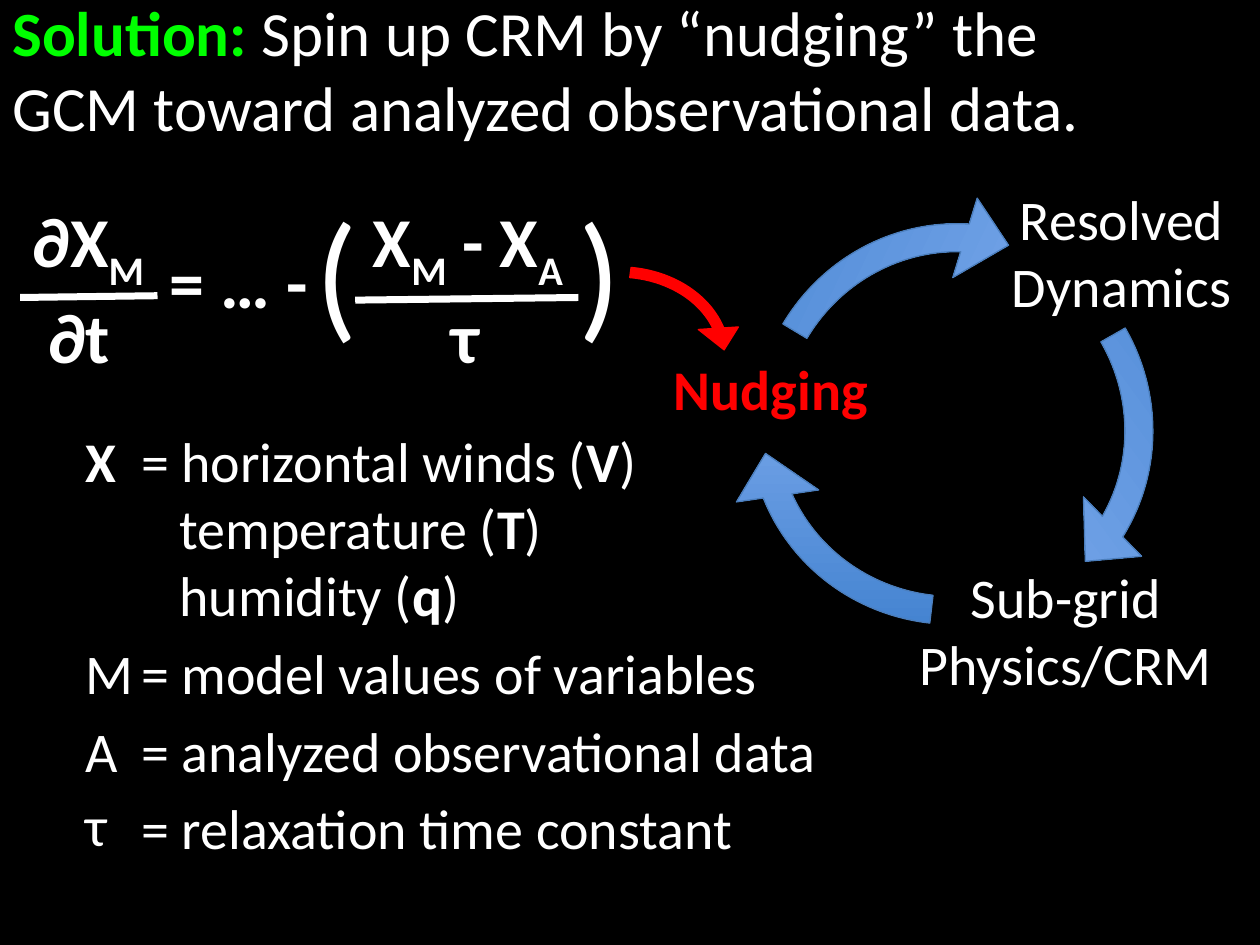
import pptx
import pptx.dml.color
import pptx.enum.shapes
import pptx.enum.text
import pptx.oxml.ns
import pptx.util
from lxml import etree

Pt = pptx.util.Pt
Align = pptx.enum.text.PP_ALIGN
Anchor = pptx.enum.text.MSO_ANCHOR
qn = pptx.oxml.ns.qn


def rgb(value):
    return pptx.dml.color.RGBColor.from_string(value)


class SlideBuilder:
    font_name = "Calibri"
    white, red, green, black = "FFFFFF", "FF0000", "00FF00", "000000"
    arrow_gradient, arrow_line = ("3F80CE", "A4C4FF"), "4B7EBC"

    def __init__(self, slide):
        self.slide = slide
        self.shapes = slide.shapes
        slide.background.fill.solid()
        slide.background.fill.fore_color.rgb = rgb(self.black)

    def start_group(self):
        self.shapes = self.slide.shapes.add_group_shape().shapes

    def end_group(self):
        self.shapes = self.slide.shapes

    def text_box(self, left, top, width, height, anchor=Anchor.TOP):
        box = self.shapes.add_textbox(Pt(left), Pt(top), Pt(width), Pt(height))
        frame = box.text_frame
        frame.word_wrap = True
        frame.vertical_anchor = anchor
        return frame

    def paragraph(self, frame, runs, size, color=white, bold=None,
                  align=Align.LEFT, margin=0, hanging=0, after=0, bullet=None):
        first = frame.paragraphs[0]
        paragraph = frame.add_paragraph() if first.runs else first
        paragraph.alignment = align
        paragraph.space_after = Pt(after)
        font = paragraph.font
        font.name, font.size, font.bold = self.font_name, Pt(size), bold
        font.color.rgb = rgb(color)
        properties = paragraph._p.get_or_add_pPr()
        properties.set("marL", str(Pt(margin)))
        properties.set("indent", str(Pt(-hanging)))
        if bullet:
            defaults = properties.find(qn("a:defRPr"))
            defaults.addprevious(etree.Element(qn("a:buFont"), typeface=self.font_name))
            defaults.addprevious(etree.Element(qn("a:buChar"), char=bullet))
        for text, style in runs:
            run = paragraph.add_run()
            run.text = text
            if "bold" in style:
                run.font.bold = style["bold"]
            if "color" in style:
                run.font.color.rgb = rgb(style["color"])
            if "baseline" in style:
                run._r.get_or_add_rPr().set("baseline", str(style["baseline"]))

    def label(self, text, left, top, width, height, size=32, **style):
        frame = self.text_box(left, top, width, height)
        self.paragraph(frame, [(text, {})], size, **style)

    def arc_arrow(self, left, top, width, height, adjustments, rotation=0, color=None):
        arrow = self.shapes.add_shape(
            pptx.enum.shapes.MSO_SHAPE.CIRCULAR_ARROW,
            Pt(left), Pt(top), Pt(width), Pt(height))
        for index, value in enumerate(adjustments):
            arrow.adjustments[index] = value
        arrow.rotation = rotation
        arrow.shadow.inherit = False
        if color:
            arrow.fill.solid()
            arrow.fill.fore_color.rgb = rgb(color)
        else:
            arrow.fill.gradient()
            arrow.fill.gradient_angle = 270
            stops = arrow.fill.gradient_stops
            for position, (stop, shade) in enumerate(zip(stops, self.arrow_gradient)):
                stop.position = position
                stop.color.rgb = rgb(shade)
        arrow.line.color.rgb = rgb(color or self.arrow_line)
        arrow.line.width = Pt(0.75)

    def fraction_bar(self, x1, y1, x2, y2):
        bar = self.shapes.add_connector(
            pptx.enum.shapes.MSO_CONNECTOR.STRAIGHT, Pt(x1), Pt(y1), Pt(x2), Pt(y2))
        bar.line.color.rgb = rgb(self.white)
        bar.line.width = Pt(4)
        etree.SubElement(bar._element.spPr, qn("a:effectLst"))


def add_title(builder):
    title = builder.text_box(0, -5.76, 660, 90, Anchor.MIDDLE)
    builder.paragraph(title, [
        ("Solution: ", {"bold": True, "color": builder.green}),
        ("Spin up CRM by “nudging” the GCM toward analyzed observational data.", {}),
    ], 36)


def add_cycle(builder):
    builder.start_group()
    for rotation, start in ((180, 166.02), (53.9, 165.89), (295.4, 165.39)):
        builder.arc_arrow(412.5, 114.5, 264, 258,
                          (0.062, 8.04, 202.98, start, 0.092), rotation)
    builder.label("Resolved Dynamics", 556.5, 102, 169, 85, align=Align.CENTER)
    builder.label("Sub-grid Physics/CRM", 514, 318, 190, 85, align=Align.CENTER)
    builder.label("Nudging", 378, 199, 143, 46, color=builder.red, bold=True)
    builder.end_group()


def add_equation(builder):
    subscript = {"baseline": -25000}
    fractions = (
        (11.5, 90, [("∂X", {}), ("M", subscript)], "∂t", 9),
        (206, 154, [("X", {}), ("M", subscript), (" - X", {}), ("A", subscript)], "τ", 45),
    )
    builder.start_group()
    for left, width, numerator, denominator, margin in fractions:
        fraction = builder.text_box(left, 109.5, width, 104)
        builder.paragraph(fraction, numerator, 40, bold=True)
        builder.paragraph(fraction, [(denominator, {})], 40, bold=True, margin=margin)
    builder.label("= … -", 90, 132.5, 95, 55, 40, bold=True)
    for parenthesis, left in (("(", 173), (")", 323.5)):
        builder.label(parenthesis, left, 102, 48, 104, 80)
    builder.fraction_bar(11.5, 170, 90, 169)
    builder.fraction_bar(203, 171.5, 330.5, 170)
    builder.end_group()


def add_definitions(builder):
    definitions = builder.text_box(41.5, 240, 444, 258)
    bold = {"bold": True}
    entry = {"margin": 32, "hanging": 32}
    continued = {"margin": 54}
    lines = (
        ([("X", bold), ("\t= horizontal winds (", {}), ("V", bold), (")", {})], entry, 0),
        ([("temperature (", {}), ("T", bold), (")", {})], continued, 0),
        ([("humidity (", {}), ("q", bold), (")", {})], continued, 6),
        ([("M\t= model values of variables", {})], entry, 6),
        ([("A\t= analyzed observational data", {})], entry, 6),
        ([("= relaxation time constant", {})], {**entry, "bullet": "τ"}, 6),
    )
    for runs, layout, after in lines:
        builder.paragraph(definitions, runs, 32, after=after, **layout)


def main():
    presentation = pptx.Presentation()
    presentation.slide_width, presentation.slide_height = Pt(720), Pt(540)
    builder = SlideBuilder(presentation.slides.add_slide(presentation.slide_layouts[6]))
    add_title(builder)
    add_cycle(builder)
    add_equation(builder)
    builder.arc_arrow(282, 144, 143.5, 119.5,
                      (0.049, 7.37, 206.47, 166.66, 0.096), color=builder.red)
    add_definitions(builder)
    presentation.save("out.pptx")


if __name__ == "__main__":
    main()
